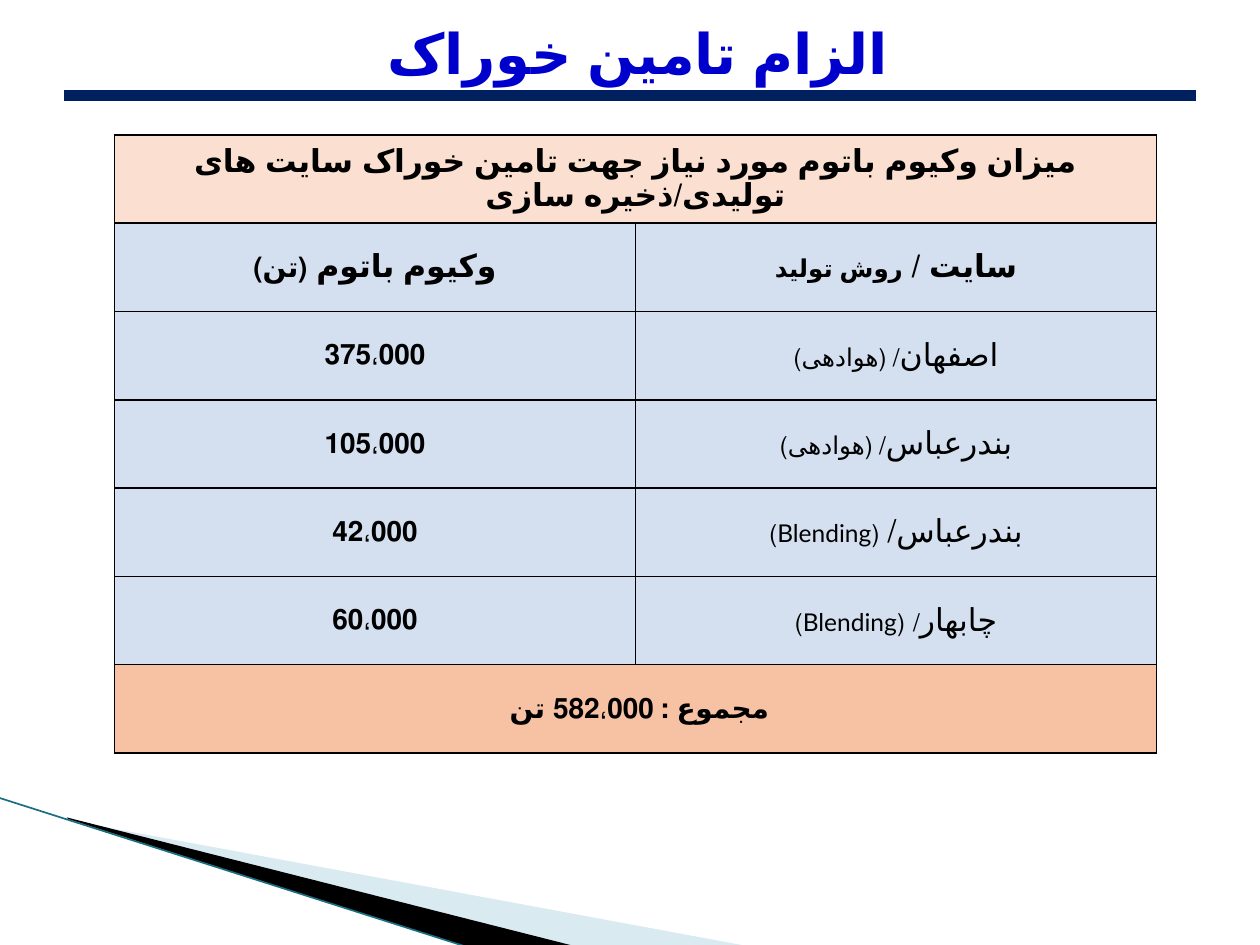
from lxml import etree
from pptx import Presentation
from pptx.dml.color import RGBColor
from pptx.enum.lang import MSO_LANGUAGE_ID
from pptx.enum.shapes import MSO_CONNECTOR
from pptx.enum.text import MSO_ANCHOR, PP_ALIGN
from pptx.oxml.ns import qn
from pptx.util import Cm, Pt

STRAIGHT = MSO_CONNECTOR.STRAIGHT
MIDDLE = MSO_ANCHOR.MIDDLE
CENTER = PP_ALIGN.CENTER
FARSI = MSO_LANGUAGE_ID.FARSI
BLACK, NAVY, BLUE, TEAL = "000000", "002060", "0000CC", "1A6E80"
PEACH, ORANGE, PALE_BLUE = "FBE0D1", "F7C1A4", "D4DFEF"

TITLE = "الزام تامین خوراک "
HEADING = "میزان وکیوم باتوم مورد نیاز جهت تامین خوراک سایت های تولیدی/ذخیره سازی"
TOTAL = "مجموع : 582،000 تن "
COLUMN_HEADS = (
    [("وکیوم باتوم ", 18), ("(تن)", 16)],
    [("سایت / ", 18), ("روش تولید", 14)],
)
SITES = [
    ("375،000", [("اصفهان", 18), ("/ (هوادهی)", 14)]),
    ("105،000", [("بندرعباس", 18), ("/ (هوادهی)", 14)]),
    ("42،000", [("بندرعباس/ ", 18), ("(Blending)", 14)]),
    ("60،000", [("چابهار", 18), ("/", 14), (" ", 18), ("(Blending)", 14)]),
]


def rgb(value):
    return RGBColor.from_string(value)


def add_line(s, start, end, color, width):
    sp = s.shapes.add_connector(STRAIGHT, *map(Cm, start + end))
    sp.line.color.rgb = rgb(color)
    sp.line.width = Pt(width)
    etree.SubElement(sp._element.spPr, qn("a:effectLst"))


def add_wedge(s, points, color, opacity=100):
    start, *rest = [(Cm(x), Cm(y)) for x, y in points]
    builder = s.shapes.build_freeform(*start)
    builder.add_line_segments(rest)
    sp = builder.convert_to_shape()
    sp.shadow.inherit = False
    sp.line.fill.background()
    sp.fill.solid()
    sp.fill.fore_color.rgb = rgb(color)
    if opacity < 100:
        clr = sp._element.spPr.find(".//" + qn("a:srgbClr"))
        etree.SubElement(clr, qn("a:alpha"), val=str(opacity * 1000))


def write_runs(p, runs, font, color, bold, line_spacing, space_after=0):
    p.alignment = CENTER
    p._p.get_or_add_pPr().set("rtl", "1")
    p.line_spacing = line_spacing
    p.space_after = Pt(space_after)
    p.font.name = font
    p.font.bold = bold
    p.font.color.rgb = rgb(color)
    sizes = {size for _, size in runs}
    if len(sizes) == 1:
        p.font.size = Pt(sizes.pop())
    for text, size in runs:
        r = p.add_run()
        r.text = text
        r.font.language_id = FARSI
        if p.font.size is None:
            r.font.size = Pt(size)


def add_title(s):
    sp = s.shapes.title
    sp.left, sp.top, sp.width, sp.height = Cm(1.27), Cm(-0.36), Cm(22.86), Cm(2.13)
    tf = sp.text_frame
    tf.vertical_anchor = MIDDLE
    write_runs(tf.paragraphs[0], [(TITLE, 32)], "Lato", BLUE, True, 1.5, 8)


def style_cell(cell, color):
    tcPr = cell._tc.get_or_add_tcPr()
    for side in ("lnL", "lnR", "lnT", "lnB"):
        ln = etree.SubElement(tcPr, qn("a:" + side), w=str(Pt(1)))
        fill = etree.SubElement(ln, qn("a:solidFill"))
        etree.SubElement(fill, qn("a:srgbClr"), val=BLACK)
    cell.fill.solid()
    cell.fill.fore_color.rgb = rgb(color)
    cell.vertical_anchor = MIDDLE


def write_cell(cell, runs, font="Calibri", bold=True, space_after=0):
    p = cell.text_frame.paragraphs[0]
    write_runs(p, runs, font, BLACK, bold, 1.07, space_after)


def add_feed_table(s):
    count = len(SITES) + 3
    frame = s.shapes.add_table(count, 2, Cm(2.31), Cm(2.72), Cm(21), Cm(1.78 * count))
    table = frame.table
    table.first_row = False
    table.horz_banding = False
    last = count - 1
    colors = {0: PEACH, last: ORANGE}
    for i, row in enumerate(table.rows):
        for cell in row.cells:
            style_cell(cell, colors.get(i, PALE_BLUE))
    for i, text, size in ((0, HEADING, 18), (last, TOTAL, 16)):
        table.cell(i, 0).merge(table.cell(i, 1))
        write_cell(table.cell(i, 0), [(text, size)])
    amount_head, site_head = COLUMN_HEADS
    write_cell(table.cell(1, 0), amount_head)
    write_cell(table.cell(1, 1), site_head, space_after=8)
    for i, (amount, site) in enumerate(SITES, start=2):
        write_cell(table.cell(i, 0), [(amount, 16)])
        write_cell(table.cell(i, 1), site, "Lato", False, 8)


def main():
    prs = Presentation()
    prs.slide_width, prs.slide_height = Cm(25.4), Cm(19.05)
    s = prs.slides.add_slide(prs.slide_layouts[5])
    add_wedge(s, [(1.4, 16.54), (15.11, 19.08), (11.58, 19.08), (1.4, 16.51)], "A0CBDC", 40)
    add_wedge(s, [(1.35, 16.48), (11.61, 19.08), (9.45, 19.1), (1.37, 16.51)], BLACK)
    add_line(s, (-0.03, 16.08), (9.45, 19.1), TEAL, 0.95)
    add_line(s, (1.3, 1.93), (24.1, 1.93), NAVY, 6)
    add_title(s)
    add_feed_table(s)
    prs.save("out.pptx")


if __name__ == "__main__":
    main()
